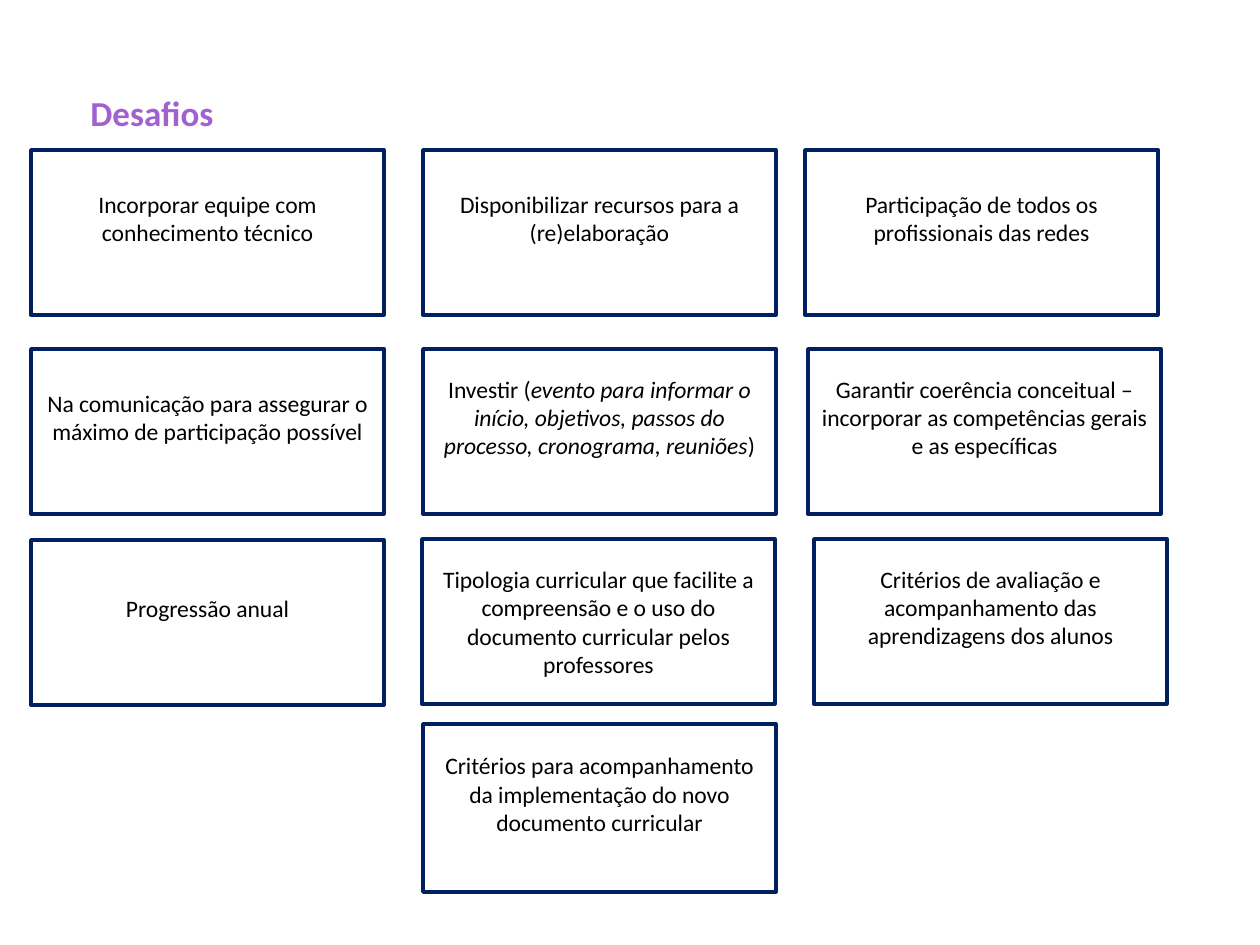
from dataclasses import dataclass
from pptx import Presentation
from pptx.dml.color import RGBColor as RGB
from pptx.enum.shapes import MSO_SHAPE as Shape
from pptx.enum.text import MSO_ANCHOR as Anchor, PP_ALIGN as Align
from pptx.util import Emu, Pt

SCALE = 914400 / 126


@dataclass(frozen=True)
class Theme:
    face: str = "Calibri"
    title: RGB = RGB(0xA1, 0x62, 0xD0)
    edge: RGB = RGB(0x00, 0x20, 0x60)
    fill: RGB = RGB(0xFF, 0xFF, 0xFF)
    ink: RGB = RGB(0x00, 0x00, 0x00)
    head: Pt = Pt(20)
    body: Pt = Pt(13.5)
    line: Pt = Pt(2)


THEME = Theme()
WIDE, HIGH = 353, 165
TEXT_LIFT = 35

CARDS = [
    (31, 150, HIGH, ["Incorporar equipe com conhecimento técnico"]),
    (423, 150, HIGH, ["Disponibilizar recursos para a (re)elaboração"]),
    (805, 150, HIGH, ["Participação de todos os profissionais das redes"]),
    (31, 349, HIGH, ["Na comunicação para assegurar o máximo de participação possível"]),
    (423, 349, HIGH, [
        "Investir (",
        "evento para informar o início, objetivos, passos do processo, cronograma, reuniões",
        ")",
    ]),
    (808, 349, HIGH, [
        "Garantir coerência conceitual – incorporar as competências gerais e as específicas"
    ]),
    (31, 540, HIGH, ["Progressão anual"]),
    (423, 724, 168, [
        "Critérios para acompanhamento da implementação do novo documento curricular"
    ]),
    (814, 539, HIGH, ["Critérios de avaliação e acompanhamento das aprendizagens dos alunos"]),
]
FULL = (422, 539, HIGH, [
    "Tipologia curricular que facilite a compreensão e o uso do documento curricular pelos professores"
])


def px(num):
    return Emu(round(num * SCALE))


def style(item, form):
    for key, value in form.items():
        setattr(item, key, value)


def write(para, text, color, **form):
    run = para.add_run()
    run.text = text
    style(run.font, {"name": THEME.face, **form})
    run.font.color.rgb = color


def add_title(slide, text):
    box = slide.shapes.add_textbox(px(78), px(88), px(689), px(54))
    frame = box.text_frame
    style(frame, {"word_wrap": True, "vertical_anchor": Anchor.MIDDLE})
    para = frame.paragraphs[0]
    para.line_spacing = 0.9
    write(para, text, THEME.title, size=THEME.head, bold=True)


def add_card(slide, left, top, high, parts, lift=TEXT_LIFT):
    card = slide.shapes.add_shape(Shape.RECTANGLE, px(left), px(top), px(WIDE), px(high))
    card.shadow.inherit = False
    card.fill.solid()
    card.fill.fore_color.rgb = THEME.fill
    card.line.color.rgb = THEME.edge
    card.line.width = THEME.line
    frame = card.text_frame
    style(frame, {
        "word_wrap": True,
        "vertical_anchor": Anchor.MIDDLE,
        "margin_bottom": px(lift),
    })
    para = frame.paragraphs[0]
    para.alignment = Align.CENTER
    for index, text in enumerate(parts):
        write(para, text, THEME.ink, size=THEME.body, italic=index == 1)


def main():
    deck = Presentation()
    style(deck, {"slide_width": px(1260), "slide_height": px(945)})
    slide = deck.slides.add_slide(deck.slide_layouts[6])
    add_title(slide, "Desafios")
    for card in CARDS:
        add_card(slide, *card)
    add_card(slide, *FULL, lift=6)
    deck.save("out.pptx")


if __name__ == "__main__":
    main()
